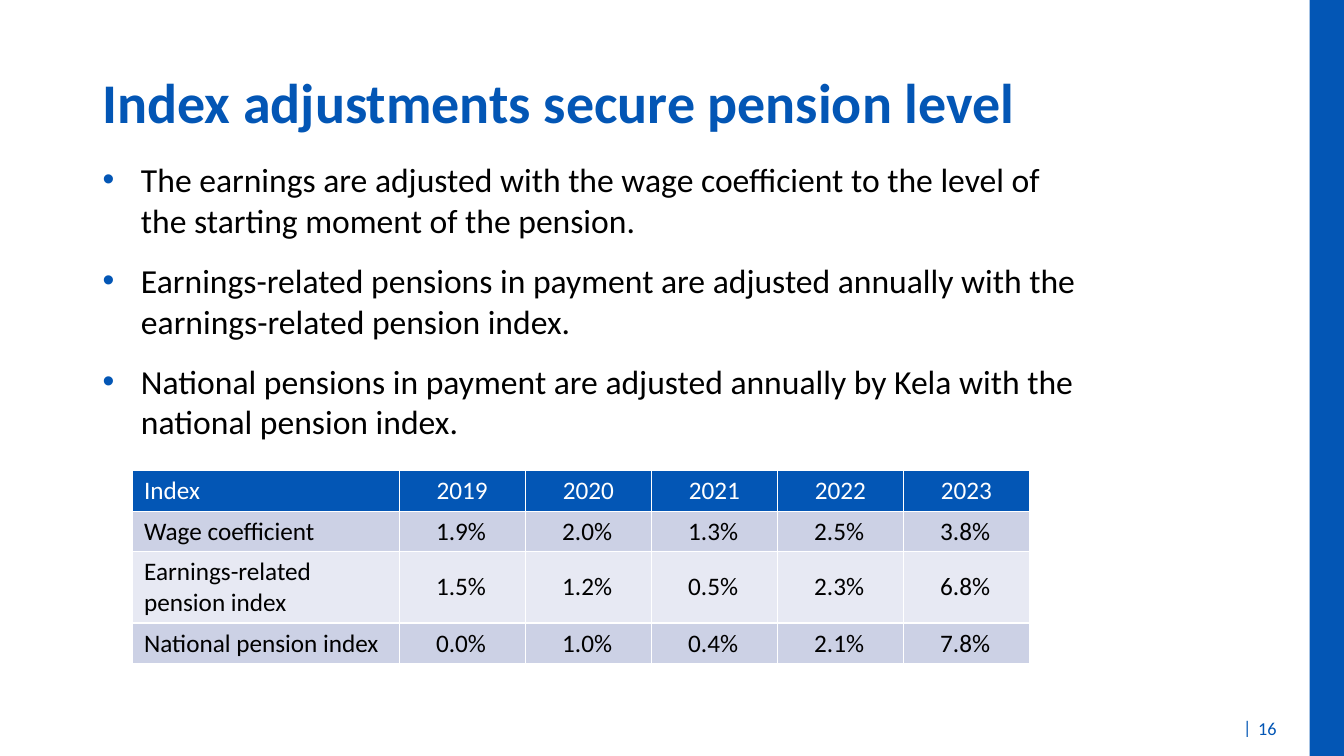
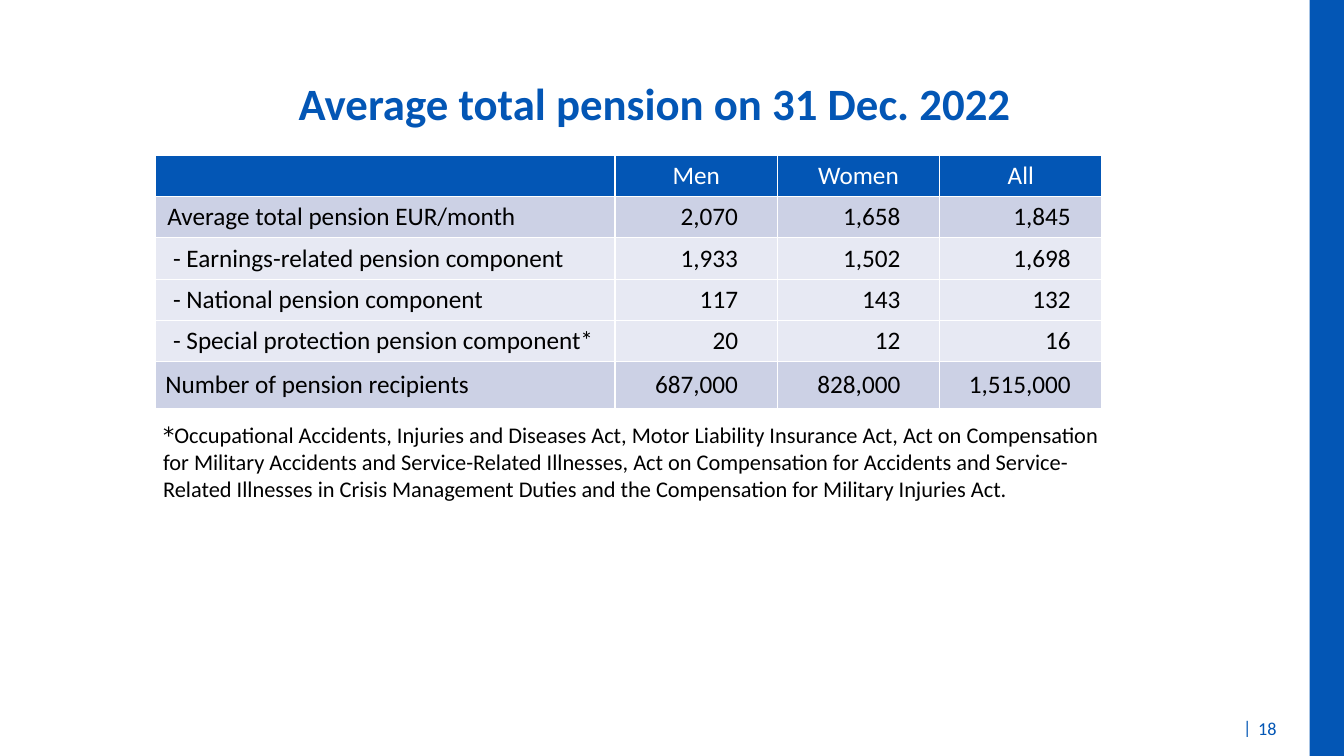
from lxml.etree import SubElement
from pptx import Presentation
from pptx.dml.color import RGBColor
from pptx.enum.shapes import MSO_SHAPE
from pptx.enum.text import MSO_ANCHOR, PP_ALIGN
from pptx.oxml.ns import qn
from pptx.util import Inches, Pt

BLUE, BLACK, WHITE = "0356B5", "000000", "FFFFFF"
DARK_ROW, LIGHT_ROW = "CCD1E5", "E7E9F3"
FONT = "Calibri"


def color(value):
    return RGBColor.from_string(value)


def set_font(font, size, fill, bold=False, name=FONT):
    font.name, font.size, font.bold = name, Pt(size), bold
    font.color.rgb = color(fill)


def add_text_frame(slide, left, top, width, height, wrap=True):
    box = slide.shapes.add_textbox(Inches(left), Inches(top), Inches(width), Inches(height))
    box.text_frame.word_wrap = wrap
    return box.text_frame


def add_line_of_text(slide, area, text, size, fill, bold=False, align=PP_ALIGN.LEFT, wrap=True):
    frame = add_text_frame(slide, *area, wrap=wrap)
    paragraph = frame.paragraphs[0]
    paragraph.text, paragraph.alignment = text, align
    set_font(paragraph.font, size, fill, bold)
    return frame


def add_title(slide, area, text, size, align=PP_ALIGN.LEFT):
    add_line_of_text(slide, area, text, size, BLUE, True, align)


def add_framed_slide(presentation, number):
    """Add a blank slide with the side band and the page number."""
    slide = presentation.slides.add_slide(presentation.slide_layouts[6])
    band = slide.shapes.add_shape(
        MSO_SHAPE.RECTANGLE, Inches(12.99), 0, Inches(0.34), presentation.slide_height)
    band.shadow.inherit = False
    band.fill.solid()
    band.fill.fore_color.rgb = color(BLUE)
    band.line.fill.background()
    add_line_of_text(slide, (12.23, 7.06, 0.29, 0.35), "|", 13, BLUE, wrap=False)
    frame = add_line_of_text(slide, (12.38, 7.05, 0.44, 0.35), str(number), 13, BLUE)
    frame.vertical_anchor = MSO_ANCHOR.MIDDLE
    return slide


def add_bullets(slide, area, items):
    frame = add_text_frame(slide, *area)
    for index, item in enumerate(items):
        paragraph = frame.add_paragraph() if index else frame.paragraphs[0]
        paragraph.text = item
        if index:
            paragraph.space_before = Pt(14.5)
        properties = paragraph._p.get_or_add_pPr()
        properties.set("marL", str(Inches(0.38)))
        properties.set("indent", str(-Inches(0.38)))
        bullet_color = SubElement(properties, qn("a:buClr"))
        SubElement(bullet_color, qn("a:srgbClr"), val=BLUE)
        SubElement(properties, qn("a:buFont"), typeface="Arial")
        SubElement(properties, qn("a:buChar"), char="•")
        set_font(paragraph.font, 24, BLACK)


def set_borders(cell):
    properties = cell._tc.get_or_add_tcPr()
    for side in ("lnL", "lnR", "lnT", "lnB"):
        line = SubElement(properties, qn(f"a:{side}"), w=str(Pt(1)))
        fill = SubElement(line, qn("a:solidFill"))
        SubElement(fill, qn("a:srgbClr"), val=WHITE)


def set_margins(cell, left, top, right, bottom):
    cell.margin_left, cell.margin_top = Inches(left), Inches(top)
    cell.margin_right, cell.margin_bottom = Inches(right), Inches(bottom)


def add_index_table(slide, left, top, widths, heights, rows, fills, right_margins):
    """Add a table with a blue header, labels at left and numbers aligned right."""
    table = slide.shapes.add_table(
        len(rows), len(widths), Inches(left), Inches(top),
        Inches(sum(widths)), Inches(sum(heights))).table
    table.first_row = table.horz_banding = False
    for column, width in zip(table.columns, widths):
        column.width = Inches(width)
    for row, height in zip(table.rows, heights):
        row.height = Inches(height)
    for row_index, (values, fill) in enumerate(zip(rows, fills)):
        for column_index, value in enumerate(values):
            cell = table.cell(row_index, column_index)
            set_borders(cell)
            cell.fill.solid()
            cell.fill.fore_color.rgb = color(fill)
            paragraph = cell.text_frame.paragraphs[0]
            paragraph.text = value
            set_font(paragraph.font, 18, BLACK if row_index else WHITE)
            if row_index:
                cell.vertical_anchor = MSO_ANCHOR.MIDDLE
            if column_index == 0:
                set_margins(cell, 0.12, 0.05, 0.04, 0.05)
            elif row_index == 0:
                paragraph.alignment = PP_ALIGN.CENTER
            else:
                paragraph.alignment = PP_ALIGN.RIGHT
                set_margins(cell, 0.01, 0.05, right_margins[column_index - 1], 0.05)
    return table


def add_footnote(slide, area, mark, text):
    paragraph = add_text_frame(slide, *area).paragraphs[0]
    for content, name in ((mark, "DejaVu Sans"), (text, FONT)):
        run = paragraph.add_run()
        run.text = content
        set_font(run.font, 16, BLACK, name=name)


def add_index_slide(presentation):
    slide = add_framed_slide(presentation, 16)
    add_title(slide, (0.92, 0.62, 9.66, 0.94), "Index adjustments secure pension level", 40)
    add_bullets(slide, (0.92, 1.53, 9.92, 2.93), [
        "The earnings are adjusted with the wage coefficient to the level of "
        "the starting moment of the pension.",
        "Earnings-related pensions in payment are adjusted annually with the "
        "earnings-related pension index.",
        "National pensions in payment are adjusted annually by Kela with the "
        "national pension index.",
    ])
    rows = [
        ("Index", "2019", "2020", "2021", "2022", "2023"),
        ("Wage coefficient", "1.9%", "2.0%", "1.3%", "2.5%", "3.8%"),
        ("Earnings-related pension index", "1.5%", "1.2%", "0.5%", "2.3%", "6.8%"),
        ("National pension index", "0.0%", "1.0%", "0.4%", "2.1%", "7.8%"),
    ]
    add_index_table(slide, 1.31, 4.67, [2.65] + [1.25] * 5, [0.4, 0.4, 0.71, 0.4], rows,
                    [BLUE, DARK_ROW, LIGHT_ROW, DARK_ROW], [0.39] * 5)


def add_average_slide(presentation):
    slide = add_framed_slide(presentation, 18)
    add_title(slide, (0.01, 0.7, 12.97, 0.94), "Average total pension on 31 Dec. 2022", 32,
              PP_ALIGN.CENTER)
    rows = [
        ("", "Men", "Women", "All"),
        ("Average total pension EUR/month", "2,070", "1,658", "1,845"),
        (" - Earnings-related pension component", "1,933", "1,502", "1,698"),
        (" - National pension component", "117", "143", "132"),
        (" - Special protection pension component*", "20", "12", "16"),
        ("Number of pension recipients", "687,000", "828,000", "1,515,000"),
    ]
    table = add_index_table(slide, 1.54, 1.54, [4.56] + [1.61] * 3, [0.41] * 5 + [0.46], rows,
                            [BLUE, DARK_ROW] + [LIGHT_ROW] * 3 + [DARK_ROW],
                            [0.39, 0.39, 0.31])
    table.cell(5, 0).margin_left = Inches(0.1)
    add_footnote(
        slide, (1.52, 4.13, 9.56, 0.91), "*",
        "Occupational Accidents, Injuries and Diseases Act, Motor Liability Insurance Act, "
        "Act on Compensation for Military Accidents and Service-Related Illnesses, "
        "Act on Compensation for Accidents and Service-Related Illnesses in Crisis Management "
        "Duties and the Compensation for Military Injuries Act.")


def main():
    presentation = Presentation()
    presentation.slide_width, presentation.slide_height = Inches(13.33), Inches(7.5)
    add_index_slide(presentation)
    add_average_slide(presentation)
    presentation.save("out.pptx")


if __name__ == "__main__":
    main()
